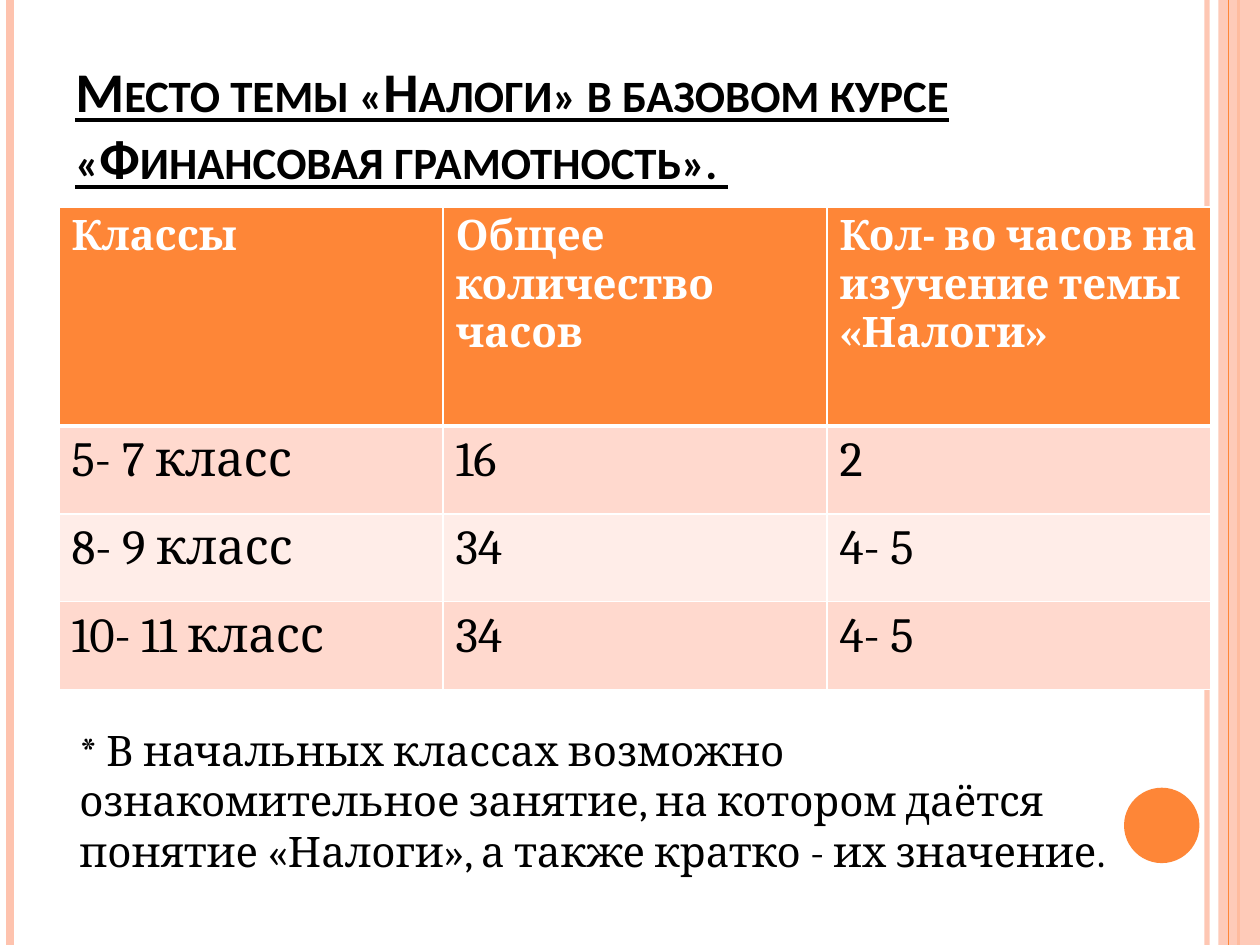
import dataclasses

import lxml.etree
import pptx
import pptx.dml.color
import pptx.enum.shapes
import pptx.enum.text
import pptx.oxml.ns
import pptx.util
from pptx.util import Cm

qn = pptx.oxml.ns.qn


@dataclasses.dataclass(frozen=True)
class Theme:
    accent: str = "FE8637"
    rail: str = "FEC3AE"
    band_dark: str = "FFD9CE"
    band_light: str = "FFEDE8"
    white: str = "FFFFFF"
    ink: str = "000000"
    title_font: str = "Calibri"
    body_font: str = "Cambria"
    title_size: int = 32
    body_size: int = 24
    cell_size: int = 28


def rgb(value):
    return pptx.dml.color.RGBColor.from_string(value)


class SlideBuilder:
    def __init__(self, page, theme):
        self.page = page
        self.theme = theme

    def set_alpha(self, element, percent):
        """Make the colours inside an element partly transparent."""
        for color in element.iter(qn("a:srgbClr")):
            lxml.etree.SubElement(color, qn("a:alpha"), val=str(percent * 1000))

    def rail(self, x, color, weight, alpha=100):
        """Draw a vertical line over the full slide height."""
        line = self.page.shapes.add_connector(
            pptx.enum.shapes.MSO_CONNECTOR.STRAIGHT, Cm(x), Cm(0), Cm(x), Cm(19.05))
        line.line.color.rgb = rgb(color)
        line.line.width = pptx.util.Pt(weight)
        properties = line._element.spPr
        if alpha < 100:
            self.set_alpha(properties, alpha)
        lxml.etree.SubElement(properties, qn("a:effectLst"))

    def shape(self, kind, left, top, width, height, color, alpha=100):
        shape = self.page.shapes.add_shape(kind, Cm(left), Cm(top), Cm(width), Cm(height))
        shape.shadow.inherit = False
        shape.fill.solid()
        shape.fill.fore_color.rgb = rgb(color)
        shape.line.fill.background()
        if alpha < 100:
            self.set_alpha(shape._element.spPr, alpha)

    def span(self, para, text, size, font, color, bold=False):
        span = para.add_run()
        span.text = text
        span.font.size = pptx.util.Pt(size)
        span.font.name = font
        span.font.bold = bold
        span.font.color.rgb = rgb(color)
        return span

    def text_box(self, left, top, width, height, anchor):
        """Add an empty wrapped box and return its first paragraph."""
        box = self.page.shapes.add_textbox(Cm(left), Cm(top), Cm(width), Cm(height))
        box.text_frame.word_wrap = True
        box.text_frame.vertical_anchor = anchor
        return box.text_frame.paragraphs[0]

    def title(self, text):
        para = self.text_box(1.27, 1.02, 23.42, 2.95, pptx.enum.text.MSO_ANCHOR.BOTTOM)
        span = self.span(para, text, self.theme.title_size, self.theme.title_font,
                         self.theme.ink, bold=True)
        span.font.underline = True
        span.font._element.set("cap", "small")

    def note(self, text):
        para = self.text_box(1.35, 14.48, 21.87, 3.5, pptx.enum.text.MSO_ANCHOR.TOP)
        para.space_before = pptx.util.Pt(6)
        self.span(para, text, self.theme.body_size, self.theme.body_font, self.theme.ink)

    def cell_borders(self, cell, weights):
        properties = cell._tc.get_or_add_tcPr()
        for position, (side, weight) in enumerate(weights.items()):
            border = lxml.etree.Element(qn(f"a:ln{side}"), w=str(pptx.util.Pt(weight)))
            fill = lxml.etree.SubElement(border, qn("a:solidFill"))
            lxml.etree.SubElement(fill, qn("a:srgbClr"), val=self.theme.white)
            properties.insert(position, border)

    def table(self, rows, left, top, column_width, row_heights):
        theme = self.theme
        count = len(rows[0])
        table = self.page.shapes.add_table(
            len(rows), count, Cm(left), Cm(top),
            Cm(column_width * count), Cm(sum(row_heights))).table
        for column in table.columns:
            column.width = Cm(column_width)
        for index, (texts, height) in enumerate(zip(rows, row_heights)):
            table.rows[index].height = Cm(height)
            header = index == 0
            band = theme.band_dark if index % 2 else theme.band_light
            for column, text in enumerate(texts):
                cell = table.cell(index, column)
                cell.fill.solid()
                cell.fill.fore_color.rgb = rgb(theme.accent if header else band)
                self.cell_borders(cell, {"L": 1, "R": 1, "T": 3 if index == 1 else 1,
                                         "B": 3 if header else 1})
                self.span(cell.text_frame.paragraphs[0], text,
                          theme.body_size if header else theme.cell_size, theme.body_font,
                          theme.white if header else theme.ink, bold=header)


def main():
    deck = pptx.Presentation()
    deck.slide_width, deck.slide_height = Cm(25.4), Cm(19.05)
    theme = Theme()
    builder = SlideBuilder(deck.slides.add_slide(deck.slide_layouts[6]), theme)
    kinds = pptx.enum.shapes.MSO_SHAPE

    builder.rail(24.33, theme.rail, 3, alpha=93)
    builder.rail(0.2, theme.rail, 4.5)
    builder.rail(24.97, theme.accent, 1.5)
    builder.shape(kinds.RECTANGLE, 24.56, 0, 0.84, 19.05, theme.rail, alpha=87)
    builder.rail(24.77, theme.accent, 0.75)
    builder.shape(kinds.OVAL, 22.66, 15.88, 1.52, 1.52, theme.accent)

    builder.title("Место темы «Налоги» в базовом курсе «Финансовая грамотность». ")
    builder.note("* В начальных классах возможно ознакомительное занятие, на котором "
                 "даётся понятие «Налоги», а также кратко - их значение.")
    builder.table(
        [["Классы", "Общее количество часов", "Кол- во часов на изучение темы «Налоги»"],
         ["5- 7 класс", "16", "2"],
         ["8- 9 класс", "34", "4- 5"],
         ["10- 11 класс", "34", "4- 5"]],
        1.19, 4.17, 7.74, [4.42, 1.77, 1.77, 1.77])
    deck.save("out.pptx")


if __name__ == "__main__":
    main()
